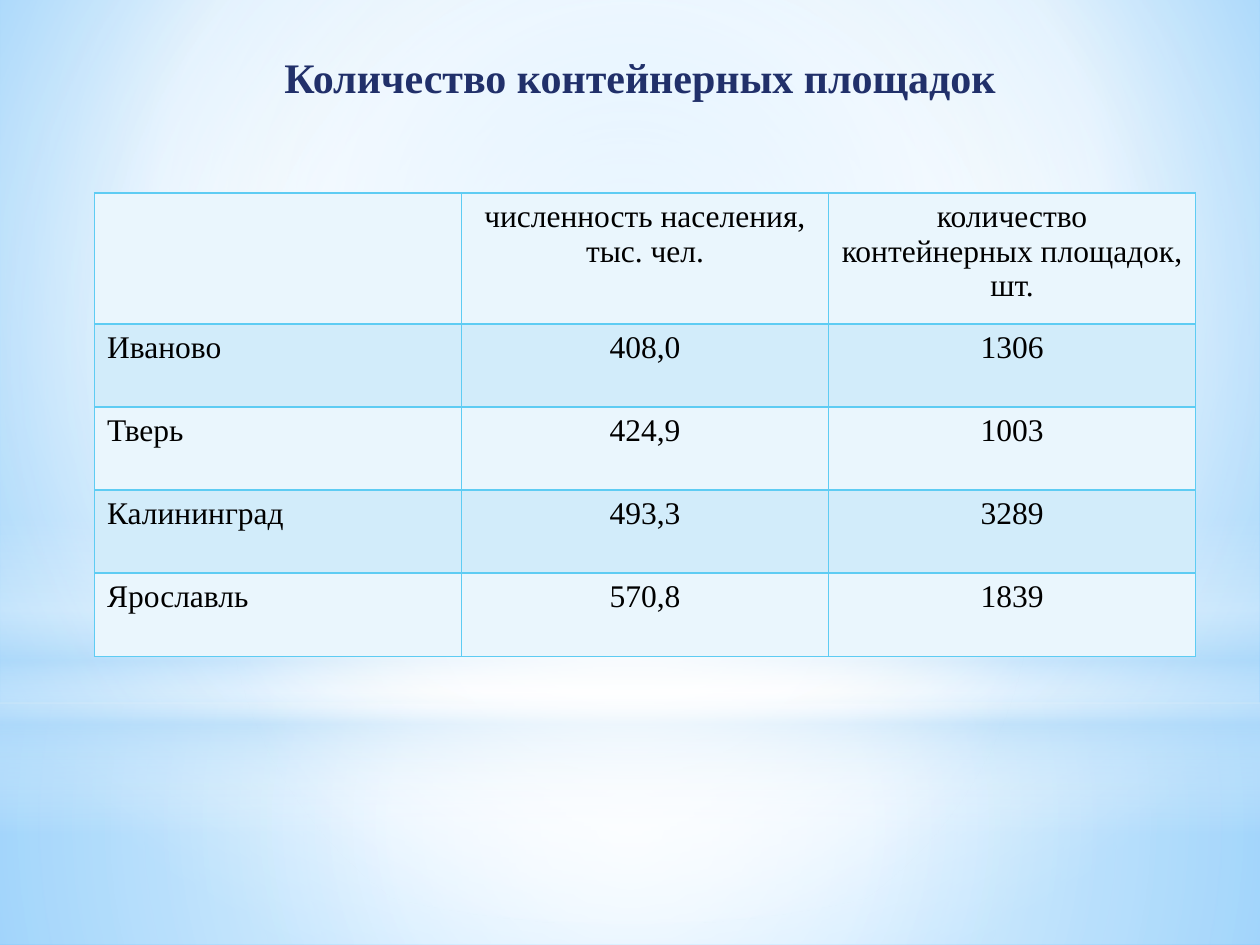
from lxml.etree import SubElement
from pptx import Presentation
from pptx.dml.color import RGBColor
from pptx.enum.shapes import MSO_SHAPE
from pptx.enum.text import MSO_ANCHOR, PP_ALIGN
from pptx.oxml.ns import qn
from pptx.util import Inches, Pt

COLORS = {
    "white": "FFFFFF", "pale": "B4DCFA", "sky": "9ED5FF", "blue": "5BB9FF",
    "navy": "21306A", "black": "000000", "line": "5ECCF3",
    "light": "EAF6FD", "dark": "D2ECFA",
}


def paint(fill, root, stops, focus=None):
    """Gradient of (percent, color, opacity) stops, round a focus or downwards."""
    fill.gradient()
    grad = root.find(".//" + qn("a:gradFill"))
    for child in list(grad):
        grad.remove(child)
    items = SubElement(grad, qn("a:gsLst"))
    for place, color, alpha in stops:
        stop = SubElement(items, qn("a:gs"), pos=str(place * 1000))
        tone = SubElement(stop, qn("a:srgbClr"), val=COLORS[color])
        if alpha < 100:
            SubElement(tone, qn("a:alpha"), val=str(alpha * 1000))
    if focus:
        path = SubElement(grad, qn("a:path"), path="circle")
        sides = {side: str(part * 1000) for side, part in zip("ltrb", focus)}
        SubElement(path, qn("a:fillToRect"), sides)
    else:
        SubElement(grad, qn("a:lin"), ang="5400000", scaled="0")


def write(frame, lines, align, style):
    frame.text = "\n".join(lines)
    for para in frame.paragraphs:
        para.alignment = align
        para.font.color.rgb = RGBColor.from_string(COLORS[style["color"]])
        for name in ("name", "size", "bold"):
            setattr(para.font, name, style[name])


prs = Presentation()
prs.slide_width, prs.slide_height = Inches(10), Inches(7.5)
slide = prs.slides.add_slide(prs.slide_layouts[5])

# Backdrop
paint(slide.background.fill, slide.element,
      [(0, "sky", 100), (60, "white", 100), (100, "blue", 100)], (20, 10, 20, 60))
center = (50, 50, 50, 50)
layers = [
    (MSO_SHAPE.RECTANGLE, 5.58, 1.92, center,
     [(0, "white", 91), (37, "white", 76), (100, "pale", 79)]),
    (MSO_SHAPE.RECTANGLE, 0, 5.58, center,
     [(0, "white", 89), (48, "white", 62), (100, "pale", 79)]),
    (MSO_SHAPE.RECTANGLE, 4.12, 2.5, None,
     [(0, "white", 0), (29, "white", 30), (45, "pale", 40),
      (55, "white", 26), (65, "pale", 60), (100, "white", 0)]),
    (MSO_SHAPE.OVAL, 1.75, 5.58, center,
     [(0, "white", 100), (56, "white", 0)]),
]
for kind, top, height, focus, stops in layers:
    layer = slide.shapes.add_shape(kind, 0, Inches(top), Inches(10), Inches(height))
    layer.shadow.inherit = False
    layer.line.fill.background()
    paint(layer.fill, layer.element, stops, focus)

# Title, brought in front of the backdrop
title = slide.shapes.title
title.element.getparent().append(title.element)
place = {"left": 1.38, "top": 0.36, "width": 7.4, "height": 0.5}
for name, value in place.items():
    setattr(title, name, Inches(value))
title.text_frame.vertical_anchor = MSO_ANCHOR.MIDDLE
body = {"name": "Times New Roman", "size": Pt(18), "bold": False, "color": "black"}
head = {**body, "size": Pt(24), "bold": True, "color": "navy"}
write(title.text_frame, ["Количество контейнерных площадок"], PP_ALIGN.CENTER, head)

# Table
rows = [
    ([], ["численность населения,", "тыс. чел."],
     ["количество контейнерных площадок,", "шт."]),
    (["Иваново"], ["408,0"], ["1306"]),
    (["Тверь"], ["424,9"], ["1003"]),
    (["Калининград"], ["493,3"], ["3289"]),
    (["Ярославль"], ["570,8"], ["1839"]),
]
table = slide.shapes.add_table(len(rows), 3, Inches(0.75), Inches(1.53),
                               Inches(8.74), Inches(3.68)).table
table.first_row = table.horz_banding = False
for r, row in enumerate(rows):
    table.rows[r].height = Inches(0.66 if r else 1.04)
    for c, lines in enumerate(row):
        cell = table.cell(r, c)
        write(cell.text_frame, lines, PP_ALIGN.CENTER if c else PP_ALIGN.LEFT, body)
        props = cell._tc.get_or_add_tcPr()
        for side in ("lnL", "lnR", "lnT", "lnB"):
            edge = SubElement(props, qn("a:" + side), w=str(Pt(1)))
            solid = SubElement(edge, qn("a:solidFill"))
            SubElement(solid, qn("a:srgbClr"), val=COLORS["line"])
        cell.fill.solid()
        shade = "dark" if r % 2 else "light"
        cell.fill.fore_color.rgb = RGBColor.from_string(COLORS[shade])

prs.save("out.pptx")
